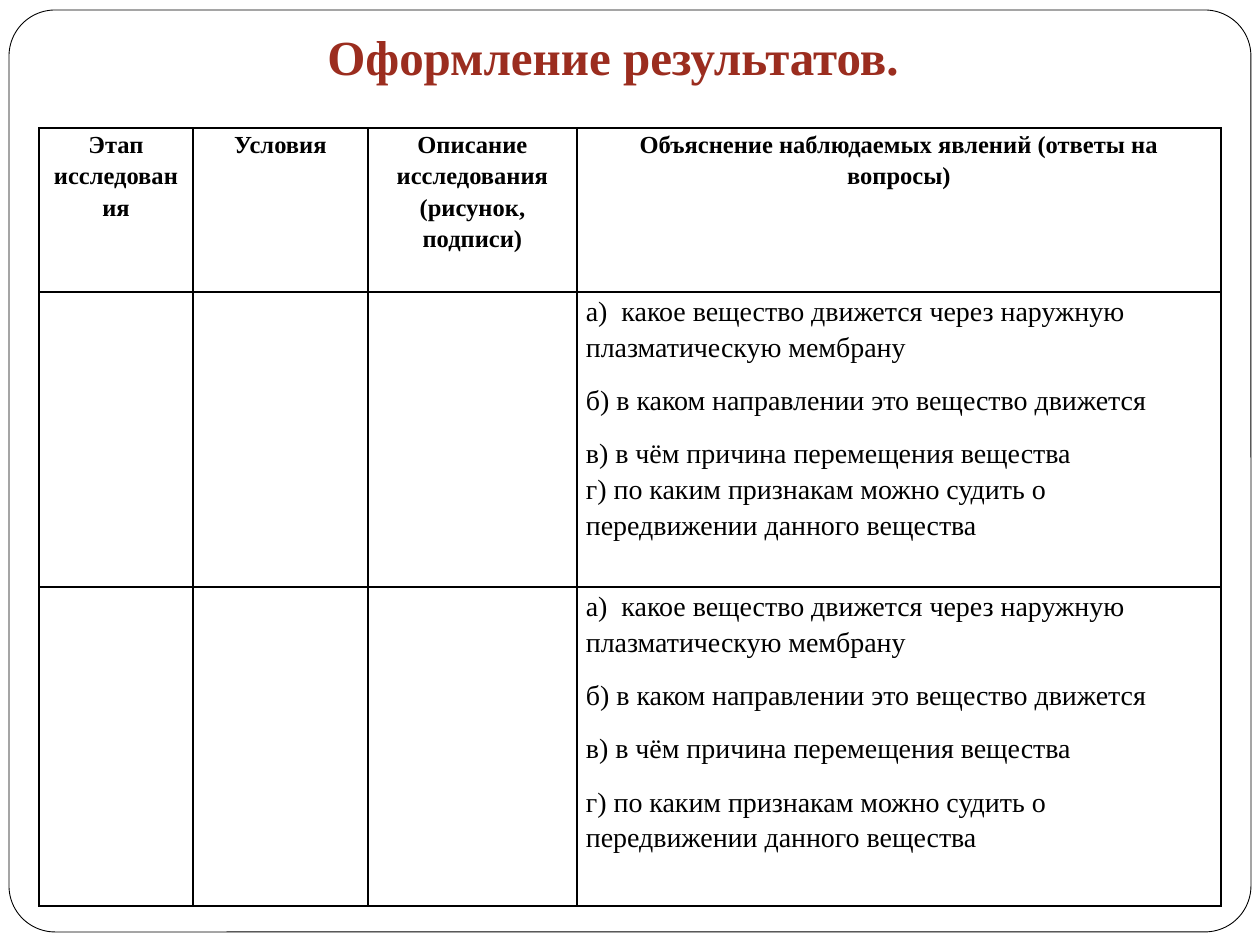
from pptx import Presentation
from pptx.util import Emu, Pt
from pptx.dml.color import RGBColor
from pptx.enum.shapes import MSO_SHAPE
from pptx.enum.text import PP_ALIGN
from pptx.oxml import parse_xml
from pptx.oxml.ns import nsdecls

theme = {
    "font": "Times New Roman",
    "ink": "000000",
    "paper": "FFFFFF",
    "title": "9B2D1F",
    "big": 28,
    "head": 14,
    "body": 16,
}


def px(n):
    return Emu(round(n * 914400 / 126))


def style(par, size, color, bold):
    for run in par.runs:
        run.font.name = theme["font"]
        run.font.size = Pt(size)
        run.font.bold = bold
        run.font.color.rgb = RGBColor.from_string(color)


deck = Presentation()
deck.slide_width, deck.slide_height = px(1260), px(945)
slide = deck.slides.add_slide(deck.slide_layouts[6])

frame = slide.shapes.add_shape(MSO_SHAPE.ROUNDED_RECTANGLE, px(9), px(10), px(1242), px(922))
frame.adjustments[0] = 0.05
frame.shadow.inherit = False
frame.fill.solid()
frame.fill.fore_color.rgb = RGBColor.from_string(theme["paper"])
frame.line.color.rgb = RGBColor.from_string(theme["ink"])
frame.line.width = Pt(0.5)

heads = [
    "Этап исследования",
    "Условия",
    "Описание исследования (рисунок, подписи)",
    "Объяснение наблюдаемых явлений (ответы на вопросы)",
]
asks = [
    "а)  какое вещество движется через наружную плазматическую мембрану",
    "б) в каком направлении это вещество движется",
    "в) в чём причина перемещения вещества",
    "г) по каким признакам можно судить о передвижении данного вещества",
]
gaps = [[10, 10, 0, 0], [10, 10, 10, 0]]
widths = [154, 175, 209, 644]
heights = [164, 295, 319]

table = slide.shapes.add_table(
    len(heights), len(widths), px(39), px(128), px(sum(widths)), px(sum(heights))
).table
table.first_row = False
table.horz_banding = False
for col, width in zip(table.columns, widths):
    col.width = px(width)
for row, height in zip(table.rows, heights):
    row.height = px(height)

for cell in table.iter_cells():
    cell.margin_left = cell.margin_right = px(9)
    cell.margin_top = cell.margin_bottom = 0
    cell.fill.background()
    props = cell._tc.get_or_add_tcPr()
    for spot, side in enumerate("LRTB"):
        props.insert(spot, parse_xml(
            f'<a:ln{side} {nsdecls("a")} w="12700"><a:solidFill>'
            f'<a:srgbClr val="{theme["ink"]}"/></a:solidFill></a:ln{side}>'
        ))

for num, head in enumerate(heads):
    cell = table.cell(0, num)
    cell.text_frame.text = head
    par = cell.text_frame.paragraphs[0]
    par.alignment = PP_ALIGN.CENTER
    par.line_spacing = 1.15
    style(par, theme["head"], theme["ink"], True)

for num, after in enumerate(gaps, 1):
    text = table.cell(num, 3).text_frame
    text.text = "\n".join(asks)
    for par, gap in zip(text.paragraphs, after):
        par.line_spacing = 1.15
        par.space_after = Pt(gap)
        style(par, theme["body"], theme["ink"], False)

title = slide.shapes.add_textbox(px(315), px(20), px(689), px(72)).text_frame
title.word_wrap = True
title.text = "Оформление результатов."
style(title.paragraphs[0], theme["big"], theme["title"], True)

deck.save("out.pptx")
